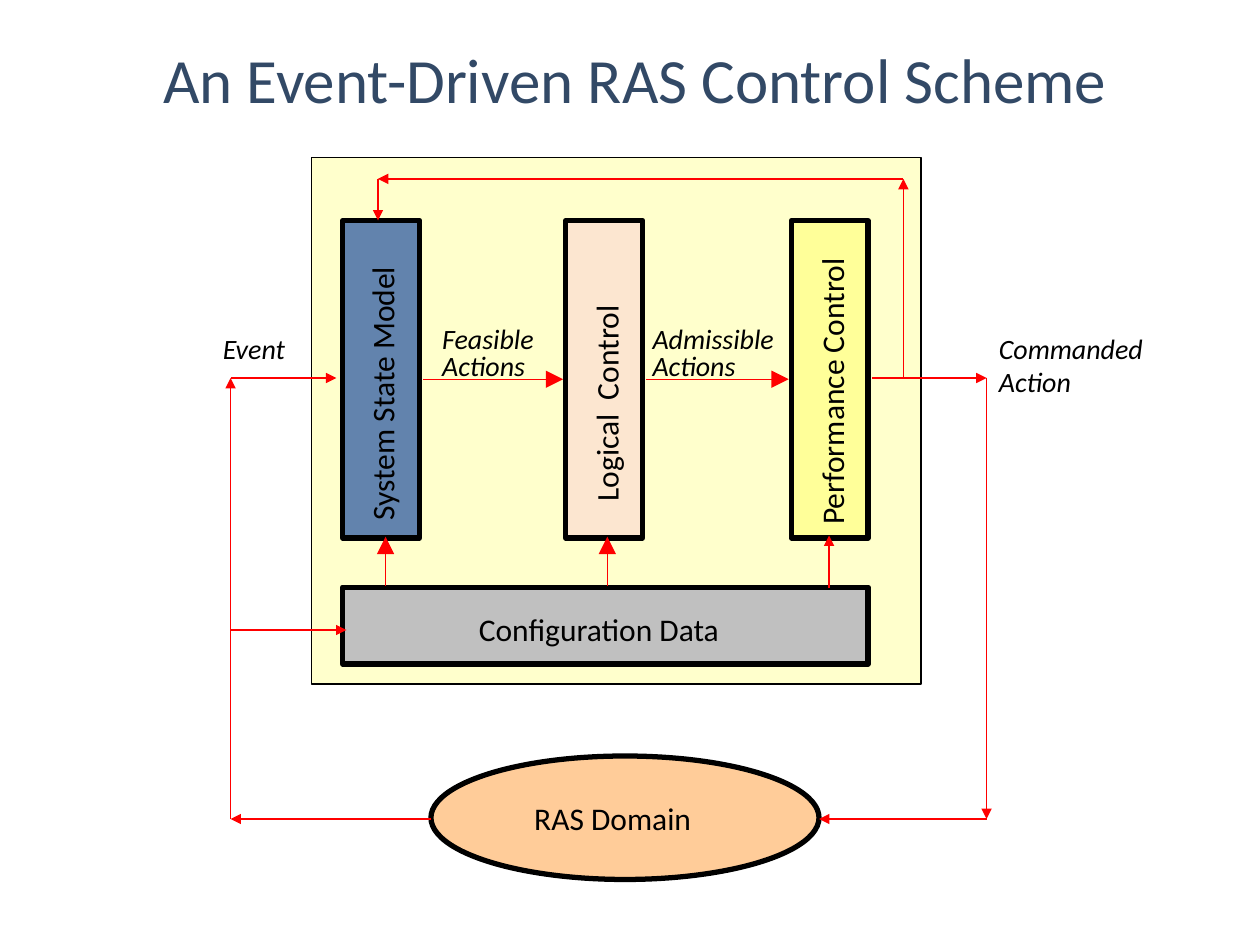
from typing import NamedTuple

from lxml.etree import SubElement
from pptx import Presentation
from pptx.dml.color import RGBColor
from pptx.enum.shapes import MSO_CONNECTOR as Connector, MSO_SHAPE as Preset
from pptx.enum.text import MSO_ANCHOR as Anchor, PP_ALIGN as Align
from pptx.oxml.ns import qn
from pptx.util import Inches, Pt

BLACK = "000000"
RED = "FF0000"
COLUMN_TOP, COLUMN_WIDTH, COLUMN_HEIGHT = 1.75, 0.61, 2.52
LABEL_HEIGHT = 0.3


class Block(NamedTuple):
    preset: Preset
    left: float
    top: float
    width: float
    height: float
    fill: str
    line_width: float = 3


class Column(NamedTuple):
    text: str
    left: float
    fill: str
    label_center: float
    label_middle: float
    label_length: float


class Label(NamedTuple):
    text: str
    left: float
    top: float
    width: float
    height: float = LABEL_HEIGHT
    size: float = 18
    italic: bool = False
    inset: tuple[float, float] = (0, 0)
    rotation: float = 0


class Arrow(NamedTuple):
    start: tuple[float, float]
    end: tuple[float, float]
    head: str = "med"


BLOCKS = [
    Block(Preset.OVAL, 3.42, 6, 3.08, 0.98, "FFCC99"),
    Block(Preset.RECTANGLE, 2.47, 1.25, 4.84, 4.18, "FFFFCC", 0.75),
    Block(Preset.RECTANGLE, 2.72, 4.66, 4.17, 0.61, "C0C0C0"),
]
COLUMNS = [
    Column("System State Model", 2.72, "6283AD", 3.03, 3.01, 2.24),
    Column("Logical  Control", 4.49, "FCE6D0", 4.81, 3.11, 1.74),
    Column("Performance Control", 6.28, "FFFF99", 6.6, 3.01, 2.31),
]
LABELS = [
    Label("RAS Domain", 4.24, 6.34, 1.44),
    Label("Configuration Data", 3.8, 4.84, 2.08),
    Label("Event", 1.67, 2.58, 0.77, 0.37, 16, True, (0.1, 0.05)),
    Label("Commanded\nAction", 7.83, 2.58, 1.47, 0.64, 16, True, (0.1, 0.05)),
]
ACTIONS = [("Feasible", 3.51), ("Admissible", 5.18)]
ARROWS = [
    Arrow((3.06, 4.65), (3.06, 4.26), "lg"),
    Arrow((4.82, 4.65), (4.82, 4.26), "lg"),
    Arrow((6.58, 4.67), (6.58, 4.25)),
    Arrow((3.36, 3.01), (4.47, 3.01), "lg"),
    Arrow((5.13, 3.01), (6.26, 3.01), "lg"),
    Arrow((1.83, 5), (2.75, 5)),
]
ROUTES = [
    [(3.42, 6.5), (1.83, 6.5), (1.83, 3), (2.67, 3)],
    [(6.92, 3), (7.83, 3), (7.83, 6.5), (6.5, 6.5)],
    [(7.17, 3), (7.17, 1.42), (3, 1.42), (3, 1.75)],
]


def color(value: str) -> RGBColor:
    return RGBColor.from_string(value)


def place(shape, left: float, top: float, width: float, height: float) -> None:
    shape.left, shape.top = Inches(left), Inches(top)
    shape.width, shape.height = Inches(width), Inches(height)


def write_text(shape, text: str, *, size: float, fill: str = BLACK, italic: bool = False,
               align: Align = Align.LEFT, anchor: Anchor = Anchor.TOP,
               inset: tuple[float, float] = (0, 0)) -> None:
    frame = shape.text_frame
    frame.text = text
    frame.word_wrap = True
    frame.vertical_anchor = anchor
    frame.margin_left = frame.margin_right = Inches(inset[0])
    frame.margin_top = frame.margin_bottom = Inches(inset[1])
    for paragraph in frame.paragraphs:
        paragraph.alignment = align
        font = paragraph.runs[0].font
        font.name, font.size, font.italic = "Calibri", Pt(size), italic
        font.color.rgb = color(fill)


def draw_block(slide, block: Block) -> None:
    box = [Inches(value) for value in block[1:5]]
    shape = slide.shapes.add_shape(block.preset, *box)
    shape.shadow.inherit = False
    shape.fill.solid()
    shape.fill.fore_color.rgb = color(block.fill)
    shape.line.color.rgb = color(BLACK)
    shape.line.width = Pt(block.line_width)


def draw_label(slide, label: Label) -> None:
    shape = slide.shapes.add_textbox(0, 0, 0, 0)
    place(shape, label.left, label.top, label.width, label.height)
    shape.rotation = label.rotation
    write_text(shape, label.text, size=label.size, italic=label.italic, inset=label.inset)


def draw_column(slide, column: Column) -> None:
    draw_block(slide, Block(Preset.RECTANGLE, column.left, COLUMN_TOP,
                            COLUMN_WIDTH, COLUMN_HEIGHT, column.fill))
    draw_label(slide, Label(column.text, column.label_center - column.label_length / 2,
                            column.label_middle - LABEL_HEIGHT / 2,
                            column.label_length, rotation=270))


def draw_arrow(slide, arrow: Arrow) -> None:
    points = [Inches(value) for value in (*arrow.start, *arrow.end)]
    connector = slide.shapes.add_connector(Connector.STRAIGHT, *points)
    connector.line.color.rgb = color(RED)
    connector.line.width = Pt(0.75)
    properties = connector._element.spPr
    SubElement(properties.find(qn("a:ln")), qn("a:tailEnd"),
               type="triangle", w=arrow.head, len=arrow.head)
    SubElement(properties, qn("a:effectLst"))


def main() -> None:
    presentation = Presentation()
    presentation.slide_width, presentation.slide_height = Inches(10), Inches(7.5)
    slide = presentation.slides.add_slide(presentation.slide_layouts.get_by_name("Title Only"))
    title = slide.shapes.title
    place(title, 0.33, 0, 9.42, 1.25)
    write_text(title, "An Event-Driven RAS Control Scheme", size=36, fill="324966",
               align=Align.CENTER, anchor=Anchor.MIDDLE, inset=(0.1, 0.05))

    for block in BLOCKS:
        draw_block(slide, block)
    for column in COLUMNS:
        draw_column(slide, column)
    for label in LABELS:
        draw_label(slide, label)
    for kind, left in ACTIONS:
        for row, text in enumerate((kind, "Actions")):
            draw_label(slide, Label(text, left, 2.55 + 0.22 * row, 1.07, 0.27, 16, True))
    for arrow in ARROWS:
        draw_arrow(slide, arrow)
    for route in ROUTES:
        for start, end in zip(route, route[1:]):
            draw_arrow(slide, Arrow(start, end))

    presentation.save("out.pptx")


if __name__ == "__main__":
    main()
